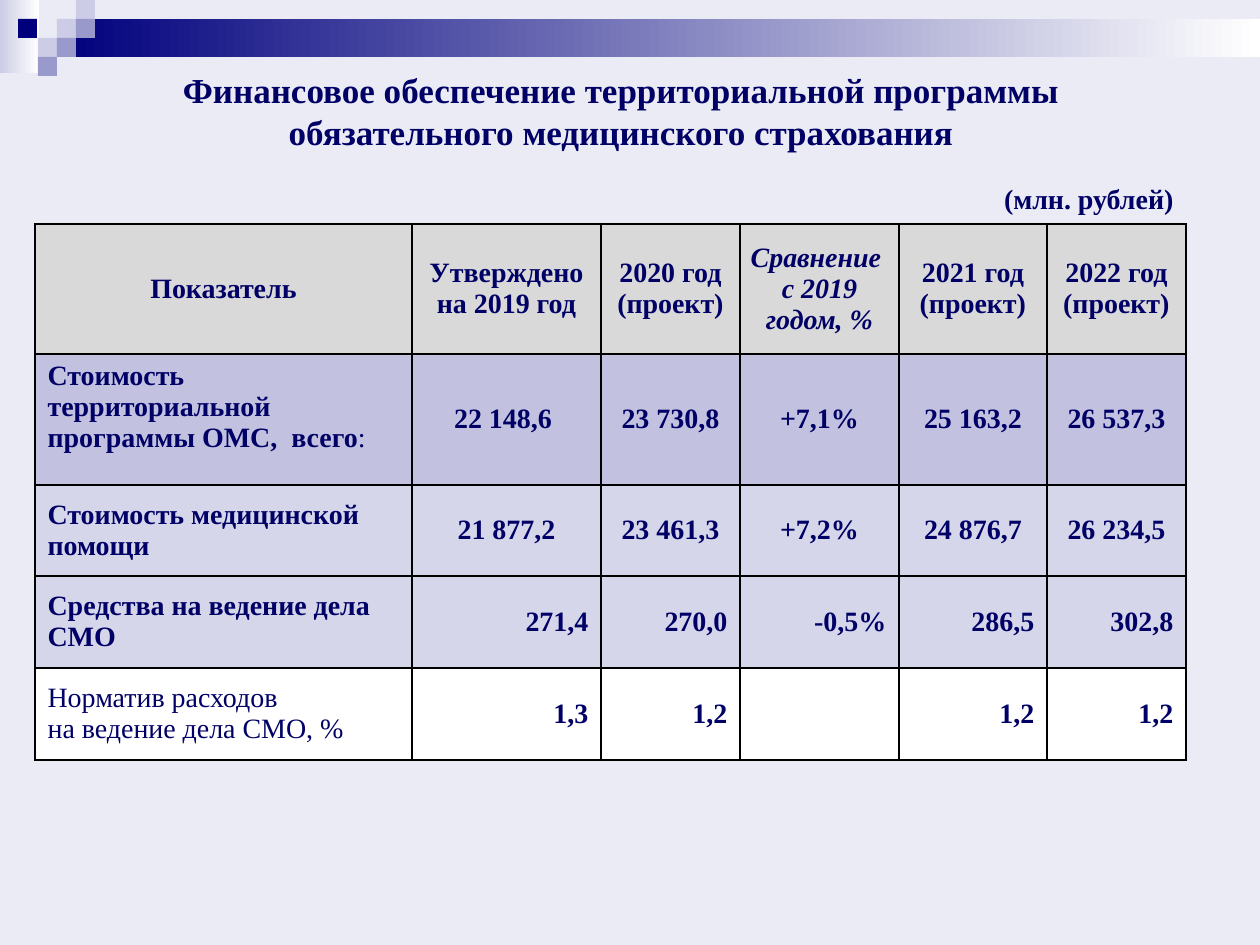
from lxml import etree
from pptx import Presentation
from pptx.dml.color import RGBColor
from pptx.enum.shapes import MSO_SHAPE
from pptx.enum.text import MSO_ANCHOR, PP_ALIGN
from pptx.oxml.ns import qn
from pptx.util import Pt

PX = 914400 // 126
RECT = MSO_SHAPE.RECTANGLE
LEFT, CENTER, RIGHT = PP_ALIGN.LEFT, PP_ALIGN.CENTER, PP_ALIGN.RIGHT
TOP, MIDDLE = MSO_ANCHOR.TOP, MSO_ANCHOR.MIDDLE
COLORS = {
    "background": "EBEBF5", "text": "000066", "border": "000000",
    "navy": "00007D", "pale": "CCCCE6", "violet": "9999CC", "white": "FFFFFF",
    "header": "D9D9D9", "total": "C2C2E0", "part": "D6D6EB",
}


def color(name):
    return RGBColor.from_string(COLORS[name])


def format_text(tf, size, align, bold=True, italic=False):
    for p in tf.paragraphs:
        p.alignment = align
        for r in p.runs:
            r.font.name = "Times New Roman"
            r.font.size = Pt(size)
            r.font.bold = bold
            r.font.italic = italic
            r.font.color.rgb = color("text")


prs = Presentation()
prs.slide_width, prs.slide_height = 1260 * PX, 945 * PX
s = prs.slides.add_slide(prs.slide_layouts[5])
s.background.fill.solid()
s.background.fill.fore_color.rgb = color("background")

# Corner decoration: two gradient bars, then a mosaic of squares
SQ = 19
decor = [
    (0, 0, 39, 73, "pale", "white"),
    (57, SQ, 1203, 2 * SQ, "navy", "white"),
]
squares = [
    (57, 1, "pale"), (76, 0, "pale"), (76, 1, "violet"), (38, 2, "pale"),
    (18, 1, "navy"), (57, 2, "violet"), (38, 3, "violet"),
]
decor += [(x, row * SQ, SQ, SQ, name, None) for x, row, name in squares]
for x, y, w, h, start, end in decor:
    sp = s.shapes.add_shape(RECT, x * PX, y * PX, w * PX, h * PX)
    sp.shadow.inherit = False
    sp.line.fill.background()
    if end:
        sp.fill.gradient()
        sp.fill.gradient_angle = 0
        for stop, name, position in zip(sp.fill.gradient_stops, (start, end), (0, 1)):
            stop.color.rgb = color(name)
            stop.position = position
    else:
        sp.fill.solid()
        sp.fill.fore_color.rgb = color(start)

# Title
title = s.shapes.title
title.left, title.top, title.width, title.height = 54 * PX, 66 * PX, 1134 * PX, 89 * PX
title.text_frame.text = ("Финансовое обеспечение территориальной программы "
                         "обязательного медицинского страхования")
title.text_frame.vertical_anchor = MIDDLE
format_text(title.text_frame, 20, CENTER)

# Unit of measure
unit = s.shapes.add_textbox(948 * PX, 175 * PX, 238 * PX, 47 * PX)
unit.text_frame.word_wrap = True
unit.text_frame.text = "(млн. рублей)"
format_text(unit.text_frame, 16, RIGHT)

# Table: fill, alignment of the values, cell texts
rows = [
    ("header", CENTER, ["Показатель", "Утверждено на 2019 год", "2020 год (проект)",
                        "Сравнение \vс 2019 годом, %", "2021 год (проект)",
                        "2022 год (проект)"]),
    ("total", CENTER, ["Стоимость территориальной программы ОМС,  всего", "22 148,6 ",
                       "23 730,8", "+7,1%", "25 163,2", "26 537,3"]),
    ("part", CENTER, ["Стоимость медицинской помощи", "21 877,2", "23 461,3", "+7,2%",
                      "24 876,7", "26 234,5"]),
    ("part", RIGHT, ["Средства на ведение дела СМО", "271,4", "270,0", "-0,5%",
                     "286,5", "302,8"]),
    ("white", RIGHT, ["Норматив расходов \vна ведение дела СМО, %", "1,3", "1,2", "",
                      "1,2", "1,2"]),
]
col_widths = [377, 189, 139, 159, 148, 139]
row_heights = [130, 131, 91, 92, 92]
table = s.shapes.add_table(len(rows), len(col_widths), 35 * PX, 224 * PX,
                           sum(col_widths) * PX, sum(row_heights) * PX).table
for col, width in zip(table.columns, col_widths):
    col.width = width * PX
for row, height in zip(table.rows, row_heights):
    row.height = height * PX

for i, (fill, align, texts) in enumerate(rows):
    for j, text in enumerate(texts):
        cell = table.cell(i, j)
        tf = cell.text_frame
        tf.text = text
        label = j == 0 and i > 0
        if (i, j) == (1, 0):
            tf.paragraphs[0].add_run().text = ":"
        format_text(tf, 16, LEFT if label else align,
                    bold=(i, j) != (4, 0), italic=(i, j) == (0, 3))
        if (i, j) == (1, 0):
            tf.paragraphs[0].runs[-1].font.bold = False
        cell.vertical_anchor = TOP if (i, j) == (1, 0) else MIDDLE
        if i < 2 and j > 1:
            cell.margin_left = cell.margin_right = 9 * PX
            cell.margin_top = cell.margin_bottom = 0

        # Borders come before the fill in the cell properties
        tcPr = cell._tc.get_or_add_tcPr()
        for side in ("lnL", "lnR", "lnT", "lnB"):
            ln = etree.SubElement(tcPr, qn("a:" + side), w=str(Pt(1)))
            solid = etree.SubElement(ln, qn("a:solidFill"))
            etree.SubElement(solid, qn("a:srgbClr"), val=COLORS["border"])
        cell.fill.solid()
        cell.fill.fore_color.rgb = color(fill)

prs.save("out.pptx")
